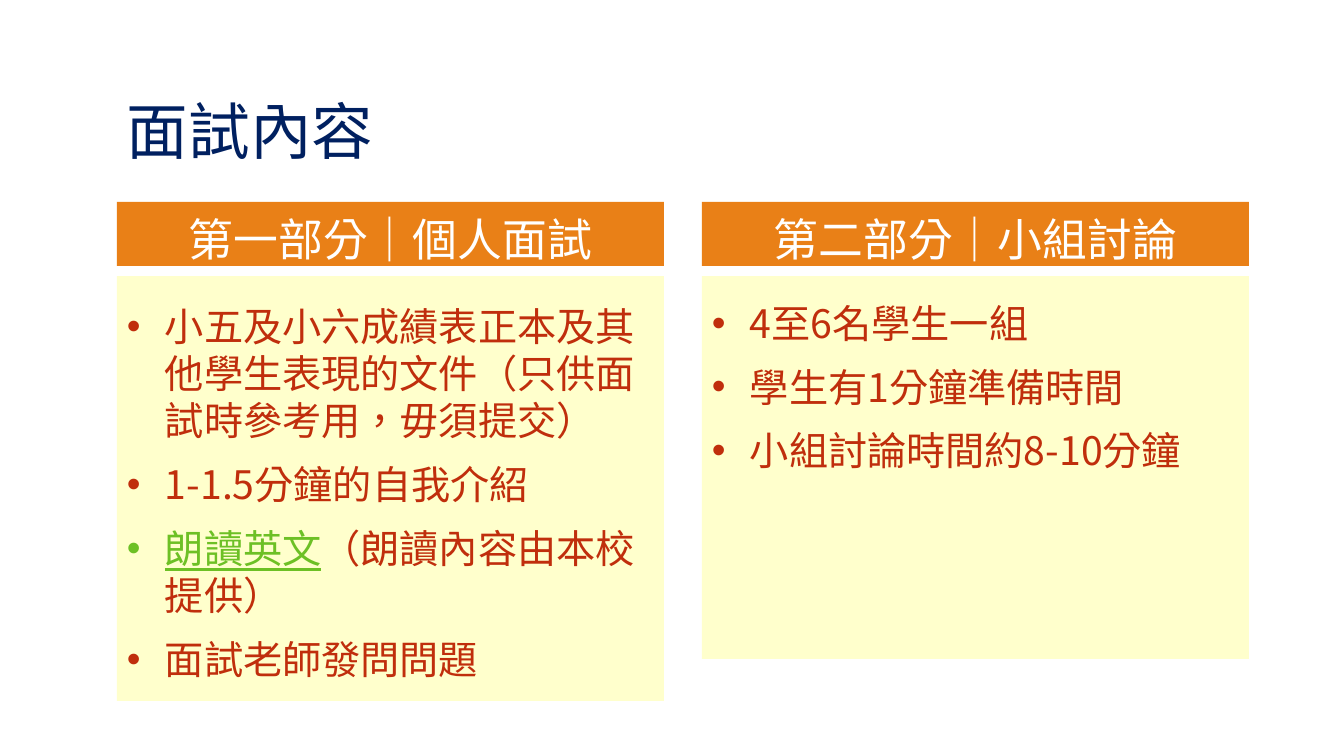
from dataclasses import dataclass

from lxml.etree import SubElement
from pptx import Presentation
from pptx.dml.color import RGBColor
from pptx.enum.shapes import MSO_SHAPE
from pptx.enum.text import MSO_ANCHOR as Anchor, PP_ALIGN as Align
from pptx.oxml.ns import qn
from pptx.util import Emu, Pt

SLIDE_W, SLIDE_H = 1344, 756
SCALE = 12192000 / SLIDE_W
COLORS = {
    "navy": "002060",
    "orange": "E98017",
    "cream": "FFFFCC",
    "rust": "C02E0C",
    "green": "6DC025",
    "white": "FFFFFF",
}
SANS_SC, SANS_JP = "Noto Sans CJK SC", "Noto Sans CJK JP"
COLUMN_W, HEADER_TOP, HEADER_H, PANEL_TOP = 547, 202, 64, 276
INDENT = 38


@dataclass(frozen=True)
class Style:
    font: str
    size: int
    line: float
    color: str
    underline: bool = False


TITLE = Style(SANS_SC, 44, 47.5, "navy")
HEADER = Style(SANS_JP, 32, 39, "white")
BODY = Style(SANS_SC, 28, 33.6, "rust")
LINKED = Style(SANS_SC, 28, 33.6, "green", True)


@dataclass(frozen=True)
class Column:
    left: int
    header: str
    panel_h: int
    anchor: Anchor
    inset_top: int
    items: list[list[tuple[str, Style]]]


COLUMNS = [
    Column(117, "第一部分｜個人面試", 425, Anchor.MIDDLE, 13, [
        [("小五及小六成績表正本及其他學生表現的文件（只供面試時參考用，毋須提交）", BODY)],
        [("1-1.5分鐘的自我介紹", BODY)],
        [("朗讀英文", LINKED), ("（朗讀內容由本校提供）", BODY)],
        [("面試老師發問問題", BODY)],
    ]),
    Column(702, "第二部分｜小組討論", 383, Anchor.TOP, 23, [
        [("4至6名學生一組", BODY)],
        [("學生有1分鐘準備時間", BODY)],
        [("小組討論時間約8-10分鐘", BODY)],
    ]),
]


def px(n: int) -> Emu:
    return Emu(round(n * SCALE))


def rgb(name: str) -> RGBColor:
    return RGBColor.from_string(COLORS[name])


def set_frame(tf, anchor: Anchor, top: int, bottom: int) -> None:
    tf.word_wrap = True
    tf.vertical_anchor = anchor
    tf.margin_left = tf.margin_right = px(10)
    tf.margin_top, tf.margin_bottom = px(top), px(bottom)


def add_run(p, text: str, style: Style) -> None:
    r = p.add_run()
    r.text = text
    f = r.font
    f.name, f.size = style.font, Pt(style.size)
    f.color.rgb = rgb(style.color)
    f.underline = style.underline
    rPr = r._r.get_or_add_rPr()
    rPr.set("lang", "zh-TW")
    SubElement(rPr, qn("a:ea")).set("typeface", style.font)
    p.line_spacing = Pt(style.line)


def add_bullet(p) -> None:
    pPr = p._p.get_or_add_pPr()
    pPr.set("marL", str(px(INDENT)))
    pPr.set("indent", str(-px(INDENT)))
    SubElement(pPr, qn("a:buFont")).set("typeface", "Arial")
    SubElement(pPr, qn("a:buChar")).set("char", "•")


def add_block(s, left: int, top: int, height: int, fill: str):
    sp = s.shapes.add_shape(MSO_SHAPE.RECTANGLE, px(left), px(top), px(COLUMN_W), px(height))
    sp.shadow.inherit = False
    sp.fill.solid()
    sp.fill.fore_color.rgb = rgb(fill)
    sp.line.fill.background()
    return sp


def add_title(s, text: str) -> None:
    tf = s.shapes.add_textbox(px(117), px(33), px(1109), px(134)).text_frame
    set_frame(tf, Anchor.BOTTOM, 5, 0)
    add_run(tf.paragraphs[0], text, TITLE)


def add_column(s, col: Column) -> None:
    panel = add_block(s, col.left, PANEL_TOP, col.panel_h, "cream")
    tf = panel.text_frame
    set_frame(tf, col.anchor, col.inset_top, 5)
    for i, item in enumerate(col.items):
        p = tf.add_paragraph() if i else tf.paragraphs[0]
        p.alignment = Align.LEFT
        add_bullet(p)
        if i:
            p.space_before = Pt(12)
        for text, style in item:
            add_run(p, text, style)

    header = add_block(s, col.left, HEADER_TOP, HEADER_H, "orange")
    set_frame(header.text_frame, Anchor.MIDDLE, 8, 0)
    p = header.text_frame.paragraphs[0]
    p.alignment = Align.CENTER
    add_run(p, col.header, HEADER)


def main() -> None:
    prs = Presentation()
    prs.slide_width, prs.slide_height = px(SLIDE_W), px(SLIDE_H)
    s = prs.slides.add_slide(prs.slide_layouts[6])
    add_title(s, "面試內容")
    for col in COLUMNS:
        add_column(s, col)
    prs.save("out.pptx")


if __name__ == "__main__":
    main()
